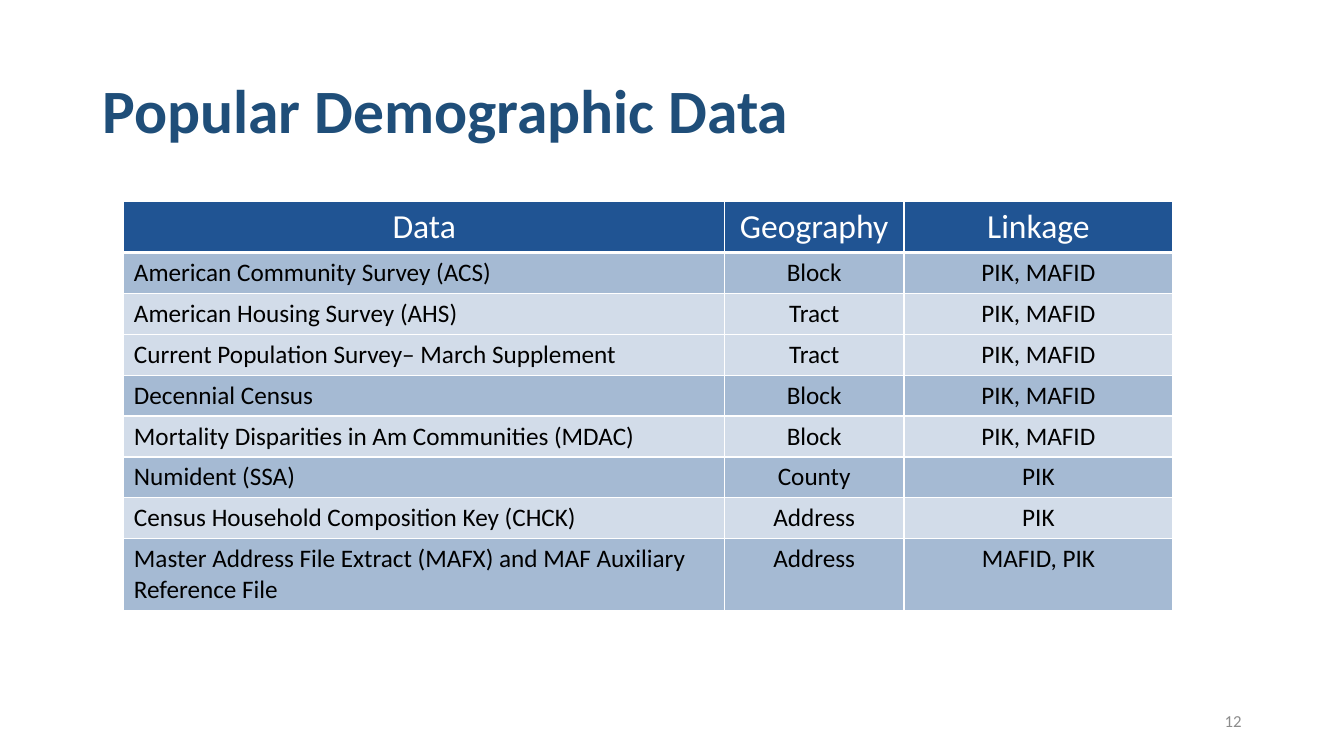
from lxml import etree
from pptx import Presentation
from pptx.dml.color import RGBColor
from pptx.enum.text import MSO_ANCHOR, PP_ALIGN
from pptx.oxml.ns import qn
from pptx.util import Pt

LEFT, CENTER, RIGHT = PP_ALIGN.LEFT, PP_ALIGN.CENTER, PP_ALIGN.RIGHT
MIDDLE = MSO_ANCHOR.MIDDLE

HEADINGS = ("Data", "Geography", "Linkage")
SURVEYS = [
    ("American Community Survey (ACS)", "Block", "PIK, MAFID", 40),
    ("American Housing Survey (AHS)", "Tract", "PIK, MAFID", 20),
    ("Current Population Survey– March Supplement", "Tract", "PIK, MAFID", 20),
    ("Decennial Census", "Block", "PIK, MAFID", 40),
    ("Mortality Disparities in Am Communities (MDAC)", "Block", "PIK, MAFID", 20),
    ("Numident (SSA)", "County", "PIK", 40),
    ("Census Household Composition Key (CHCK)", "Address", "PIK", 20),
    ("Master Address File Extract (MAFX) and MAF Auxiliary Reference File",
     "Address", "MAFID, PIK", 40),
]
COLUMN_WIDTHS = (429, 128.2, 192.2)
ROW_HEIGHTS = [36.4] + [29.2] * 7 + [51.2]


def rgb(value):
    return RGBColor.from_string(value)


class SlideBuilder:
    font = "Calibri"
    navy = "1F4E79"
    blue = "205493"
    gray = "8C8C8C"
    white = "FFFFFF"
    black = "000000"

    def __init__(self, slide):
        self.slide = slide

    def fill_text(self, frame, content, size, color, align=LEFT, bold=False):
        frame.text = content
        paragraph = frame.paragraphs[0]
        paragraph.alignment = align
        for run in paragraph.runs:
            run.font.name = self.font
            run.font.size = Pt(size)
            run.font.bold = bold
            run.font.color.rgb = rgb(color)
        return paragraph

    def text(self, box, content, size, color, align=LEFT, bold=False, spacing=1.0):
        frame = self.slide.shapes.add_textbox(*map(Pt, box)).text_frame
        frame.word_wrap = True
        frame.vertical_anchor = MIDDLE
        paragraph = self.fill_text(frame, content, size, color, align, bold)
        paragraph.line_spacing = spacing

    def border(self, cell, side, width):
        properties = cell._tc.get_or_add_tcPr()
        line = etree.SubElement(properties, qn(f"a:ln{side}"), w=str(Pt(width)))
        fill = etree.SubElement(line, qn("a:solidFill"))
        etree.SubElement(fill, qn("a:srgbClr"), val=self.white)

    def cell(self, cell, content, size, color, align, opacity, bottom):
        self.fill_text(cell.text_frame, content, size, color, align)
        for side in "LRT":
            self.border(cell, side, 1)
        self.border(cell, "B", bottom)
        cell.fill.solid()
        cell.fill.fore_color.rgb = rgb(self.blue)
        if opacity < 100:
            tint = cell._tc.tcPr.find(qn("a:solidFill")).find(qn("a:srgbClr"))
            etree.SubElement(tint, qn("a:alpha"), val=str(opacity * 1000))

    def table(self, left, top, headings, surveys, widths, heights):
        table = self.slide.shapes.add_table(
            len(heights), len(widths), Pt(left), Pt(top),
            Pt(sum(widths)), Pt(sum(heights))).table
        table.horz_banding = False
        for column, width in zip(table.columns, widths):
            column.width = Pt(width)
        for row, height in zip(table.rows, heights):
            row.height = Pt(height)
        for column, heading in enumerate(headings):
            self.cell(table.cell(0, column), heading, 24, self.white, CENTER, 100, 3)
        for row, (*values, opacity) in enumerate(surveys, 1):
            for column, value in enumerate(values):
                align = CENTER if column else LEFT
                self.cell(table.cell(row, column), value, 18, self.black,
                          align, opacity, 1)


def main():
    deck = Presentation()
    deck.slide_width, deck.slide_height = Pt(960), Pt(540)
    builder = SlideBuilder(deck.slides.add_slide(deck.slide_layouts[6]))
    builder.text((66, 28.8, 828, 104.4), "Popular Demographic Data", 44,
                 builder.navy, bold=True, spacing=0.9)
    builder.text((678, 500.4, 216, 28.8), "12", 12, builder.gray, RIGHT)
    builder.table(88.5, 144, HEADINGS, SURVEYS, COLUMN_WIDTHS, ROW_HEIGHTS)
    deck.save("out.pptx")


if __name__ == "__main__":
    main()
